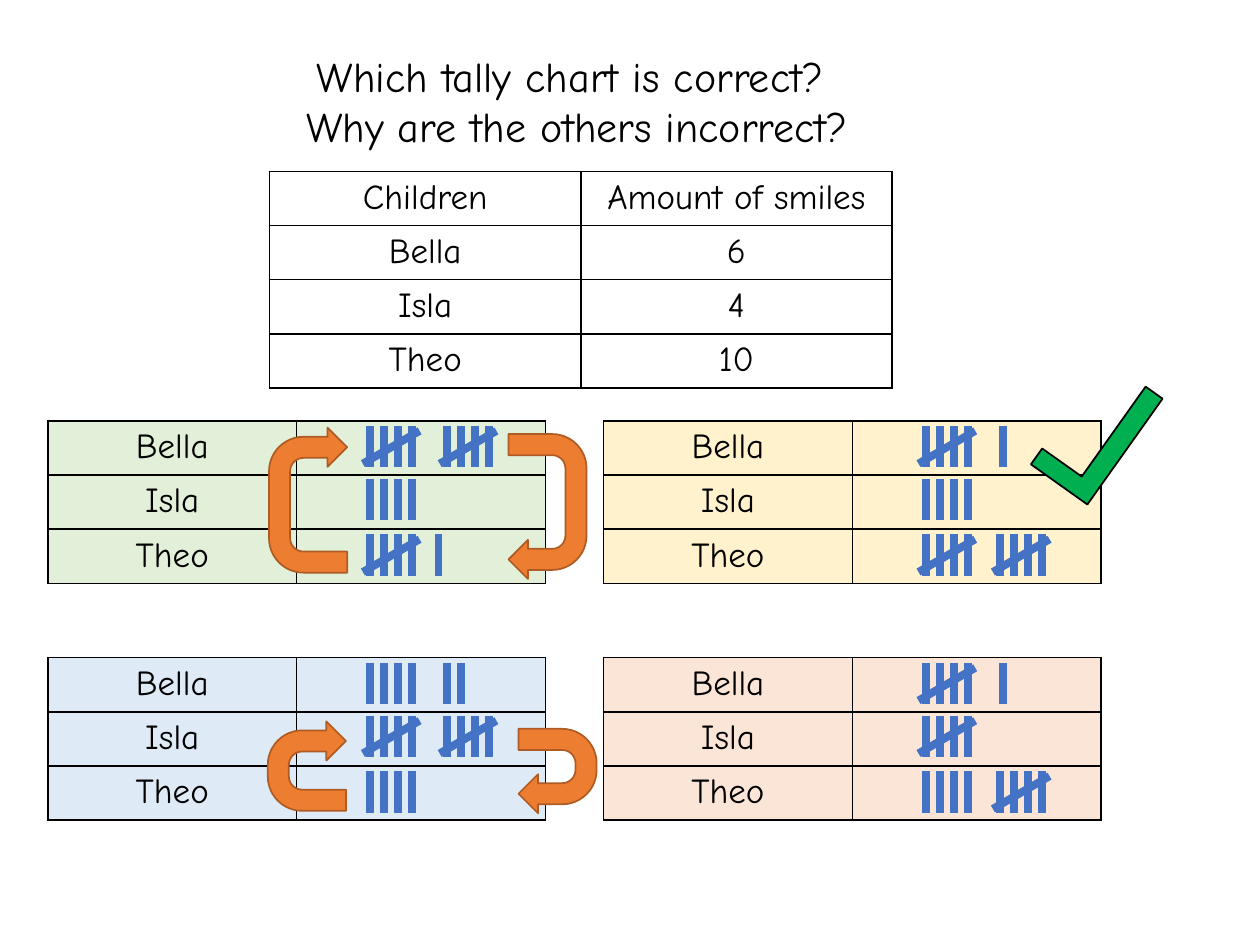
"""Build a slide that asks which of four tally charts is correct."""
from dataclasses import dataclass

from pptx import Presentation
from pptx.dml.color import RGBColor
from pptx.enum.shapes import MSO_CONNECTOR, MSO_SHAPE
from pptx.enum.text import MSO_ANCHOR, MSO_AUTO_SIZE, PP_ALIGN
from pptx.oxml import parse_xml
from pptx.oxml.ns import nsdecls
from pptx.util import Inches, Pt

CENTER = PP_ALIGN.CENTER
TOP = MSO_ANCHOR.TOP
FIXED = MSO_AUTO_SIZE.NONE
STRAIGHT = MSO_CONNECTOR.STRAIGHT
UTURN = MSO_SHAPE.U_TURN_ARROW
CORNER = MSO_SHAPE.CORNER


@dataclass(frozen=True)
class Theme:
    """Hold the colours, font and sizes of the slide."""
    font: str = "Comic Neue"
    head: int = 24
    body: int = 20
    bar: float = 4.5
    edge: int = 1
    ink: str = "000000"
    tally: str = "4472C4"
    turn: str = "ED7D31"
    rim: str = "AF5C24"
    tick: str = "00B050"
    green: str = "E2F0D9"
    yellow: str = "FFF2CC"
    blue: str = "DEEBF7"
    pink: str = "FBE5D6"


THEME = Theme()
TITLE = ("Which tally chart is correct? ", "Why are the others incorrect?")
SMILES = (("Children", "Amount of smiles"), ("Bella", "6"), ("Isla", "4"),
          ("Theo", "10"))
NAMES = ("Bella", "Isla", "Theo")
ROW = 0.43
GAP = 0.11
BAR = 0.33
MARKS = (0.04, 0.46, 0.9)
ONE, TWO = 2.56, 3.17
CHARTS = (
    (0.38, 3.34, THEME.green,
     (((ONE, 5), (TWO, 5)), ((ONE, 4),), ((ONE, 5), (3.1, 1)))),
    (0.38, 5.22, THEME.blue,
     (((ONE, 4), (TWO, 2)), ((ONE, 5), (TWO, 5)), ((ONE, 4),))),
    (4.79, 3.34, THEME.yellow,
     (((ONE, 5), (TWO, 1)), ((ONE, 4),), ((ONE, 5), (3.15, 5)))),
    (4.79, 5.22, THEME.pink,
     (((ONE, 5), (TWO, 1)), ((ONE, 5),), ((ONE, 4), (3.15, 5)))),
)
TURNS = (
    (3.77, 3.71, 1.15, 0.62, 90),
    (1.87, 3.66, 1.15, 0.62, 270),
    (4.09, 5.81, 0.67, 0.62, 90),
    (2.08, 5.77, 0.71, 0.62, 270),
)
BEND = (0.27, 0.25, 0.25, 0.44, 1)


def apply(item, form):
    """Set each attribute named in a dict of format values."""
    for name, value in form.items():
        setattr(item, name, value)


def write(para, text, size):
    """Put centred text in a paragraph."""
    para.text = text
    apply(para, {"alignment": CENTER, "line_spacing": 1.0,
                 "space_before": Pt(0)})
    apply(para.font, {"name": THEME.font, "size": Pt(size), "bold": False})
    para.font.color.rgb = RGBColor.from_string(THEME.ink)


def add_title(slide):
    """Place the two-line question in the title placeholder."""
    title = slide.shapes.title
    apply(title, {"left": Inches(0.53), "top": Inches(0.35),
                  "width": Inches(8.1), "height": Inches(1.09)})
    frame = title.text_frame
    apply(frame, {"auto_size": FIXED, "vertical_anchor": TOP,
                  "word_wrap": True})
    write(frame.paragraphs[0], TITLE[0], THEME.head)
    write(frame.add_paragraph(), TITLE[1], THEME.head)


def edge_cell(cell):
    """Draw a thin line on all four sides of a cell."""
    props = cell._tc.get_or_add_tcPr()
    for side in "LRTB":
        props.append(parse_xml(
            f'<a:ln{side} {nsdecls("a")} w="{Pt(THEME.edge)}"><a:solidFill>'
            f'<a:srgbClr val="{THEME.ink}"/></a:solidFill></a:ln{side}>'))


def add_grid(slide, left, top, width, rows, fill=None):
    """Add a two-column table with black borders."""
    table = slide.shapes.add_table(
        len(rows), 2, Inches(left), Inches(top), Inches(width),
        Inches(ROW * len(rows))).table
    apply(table, {"first_row": False, "horz_banding": False})
    for line, texts in zip(table.rows, rows):
        for cell, text in zip(line.cells, texts):
            edge_cell(cell)
            if fill:
                cell.fill.solid()
                cell.fill.fore_color.rgb = RGBColor.from_string(fill)
            else:
                cell.fill.background()
            write(cell.text_frame.paragraphs[0], text, THEME.body)


def add_bar(slide, *ends):
    """Add one thick tally line between two points."""
    bar = slide.shapes.add_connector(STRAIGHT, *map(Inches, ends))
    bar.line.width = Pt(THEME.bar)
    bar.line.color.rgb = RGBColor.from_string(THEME.tally)
    bar._element.spPr.append(parse_xml(f'<a:effectLst {nsdecls("a")}/>'))


def add_tally(slide, left, top, count):
    """Add up to four upright bars, and a slash for the fifth."""
    for step in range(min(count, 4)):
        x = left + step * GAP
        add_bar(slide, x, top, x, top + BAR)
    if count == 5:
        add_bar(slide, left + 0.39, top + 0.04, left - 0.06, top + 0.3)


def add_chart(slide, left, top, fill, rows):
    """Add a tally chart with its names and marks."""
    add_grid(slide, left, top, 3.95, [(name, "") for name in NAMES], fill)
    for drop, groups in zip(MARKS, rows):
        for shift, count in groups:
            add_tally(slide, left + shift, top + drop, count)


def add_form(slide, kind, box, turn, bend, fill, line):
    """Add a turned preset shape with a thin outline."""
    form = slide.shapes.add_shape(kind, *map(Inches, box))
    form.rotation = turn
    form.shadow.inherit = False
    for spot, value in enumerate(bend):
        form.adjustments[spot] = value
    form.fill.solid()
    form.fill.fore_color.rgb = RGBColor.from_string(fill)
    form.line.width = Pt(THEME.edge)
    form.line.color.rgb = RGBColor.from_string(line)
    return form


def main():
    """Build and save the slide."""
    deck = Presentation()
    apply(deck, {"slide_width": Inches(10), "slide_height": Inches(7.5)})
    slide = deck.slides.add_slide(deck.slide_layouts[5])
    add_title(slide)
    add_grid(slide, 2.14, 1.36, 4.94, SMILES)
    for chart in CHARTS:
        add_chart(slide, *chart)
    for *box, turn in TURNS:
        add_form(slide, UTURN, box, turn, BEND, THEME.turn, THEME.rim)
    tick = add_form(slide, CORNER, (8.43, 2.91, 0.55, 1.03), 35.4,
                    (0.28, 0.3), THEME.tick, THEME.ink)
    tick._element.spPr.get_or_add_xfrm().set("flipH", "1")
    deck.save("out.pptx")


if __name__ == "__main__":
    main()
